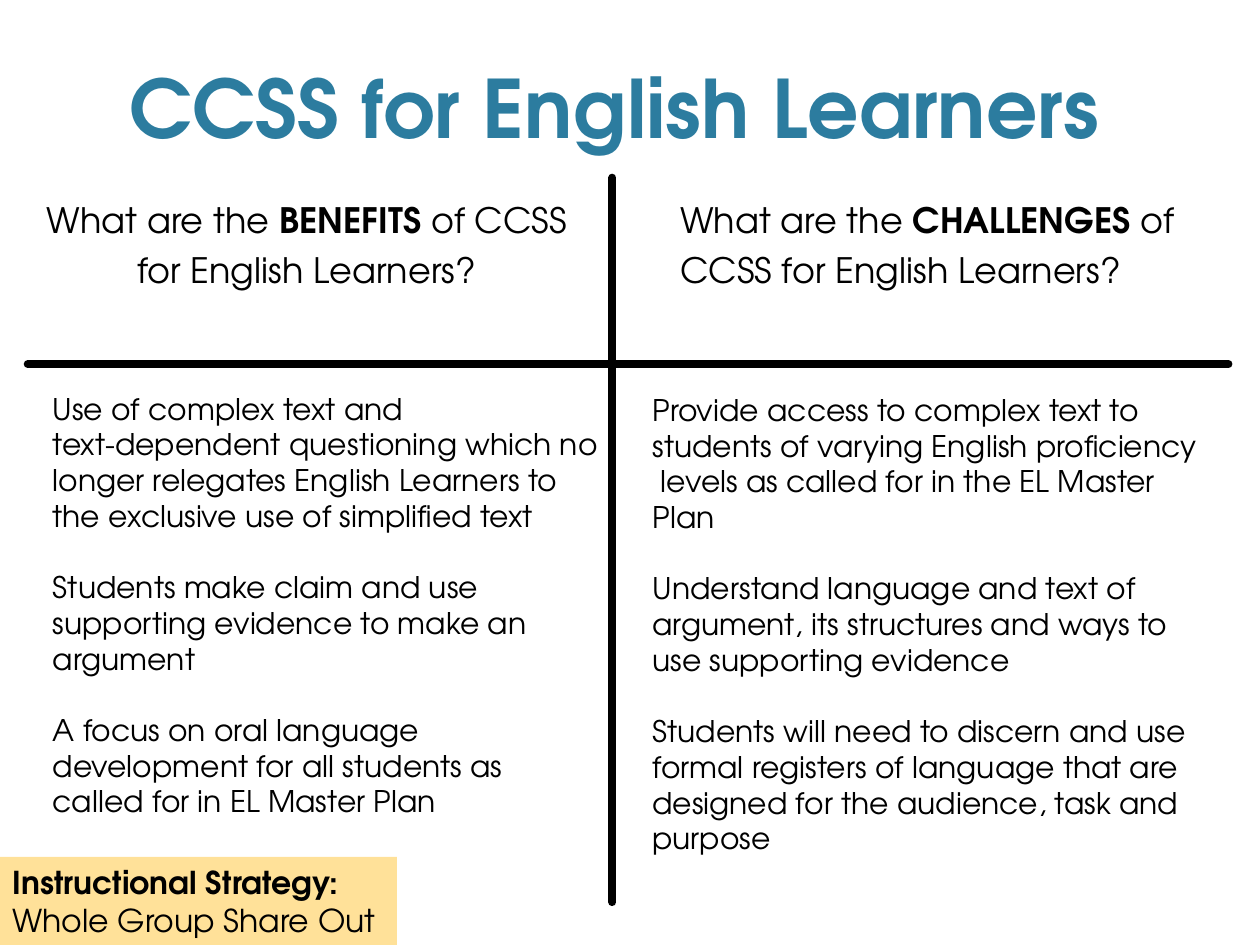
from lxml import etree
from pptx import Presentation
from pptx.dml.color import RGBColor
from pptx.enum.shapes import MSO_CONNECTOR, MSO_SHAPE
from pptx.enum.text import MSO_ANCHOR, PP_ALIGN
from pptx.oxml.ns import qn
from pptx.util import Inches, Pt

LEFT, CENTER = PP_ALIGN.LEFT, PP_ALIGN.CENTER
TOP, BOTTOM = MSO_ANCHOR.TOP, MSO_ANCHOR.BOTTOM
STRAIGHT, RECTANGLE = MSO_CONNECTOR.STRAIGHT, MSO_SHAPE.RECTANGLE

BLACK = RGBColor(0x00, 0x00, 0x00)
TEAL = RGBColor(0x2C, 0x7C, 0x9F)
CREAM = RGBColor(0xFF, 0xE1, 0x99)
FONT = "TeX Gyre Adventor"
PLAIN_INSETS = (0.1, 0.05, 0.1, 0.05)
WIDE_INSETS = (0.32, 0.1, 0.3, 0.1)
BODY_SIZE = 17
BODY_GAP = 20.4

TITLE = "CCSS for English Learners"
QUESTIONS = [
    ("BENEFITS", (0.22, 1.46, 4.43, 5.74), PLAIN_INSETS, CENTER),
    ("CHALLENGES", (5.08, 1.41, 4.67, 5.74), WIDE_INSETS, LEFT),
]
ANSWERS = [
    ((0.32, 3.05, 4.55, 4.34), [
        ["Use of complex text and",
         "text-dependent questioning which no longer relegates English Learners "
         "to the exclusive use of simplified text"],
        ["Students make claim and use supporting evidence to make an argument"],
        ["A focus on oral language development for all students as called for "
         "in EL Master Plan"],
    ]),
    ((5.08, 3.06, 4.55, 4.04), [
        ["Provide access to complex text to students of varying English "
         "proficiency  levels as called for in the EL Master Plan"],
        ["Understand language and text of argument, its structures and ways to "
         "use supporting evidence"],
        ["Students will need to discern and use formal registers of language "
         "that are designed for the audience, task and purpose"],
    ]),
]
STRATEGY = [("Instructional Strategy:", True), ("Whole Group Share Out", False)]
DIVIDERS = [(4.86, 1.41, 4.86, 7.16), (9.75, 2.89, 0.22, 2.89)]


def prepare(frame, insets=PLAIN_INSETS, anchor=TOP):
    frame.word_wrap = True
    frame.vertical_anchor = anchor
    (frame.margin_left, frame.margin_top,
     frame.margin_right, frame.margin_bottom) = map(Inches, insets)
    return frame


def add_text_frame(slide, box, insets=PLAIN_INSETS, anchor=TOP):
    return prepare(slide.shapes.add_textbox(*map(Inches, box)).text_frame, insets, anchor)


def add_paragraph(frame, runs, size, color=BLACK, align=LEFT):
    first = frame.paragraphs[0]
    paragraph = frame.add_paragraph() if first.runs else first
    paragraph.alignment = align
    paragraph.font.name = FONT
    paragraph.font.size = Pt(size)
    paragraph.font.color.rgb = color
    for text, bold in runs:
        run = paragraph.add_run()
        run.text = text
        run.font.name = FONT
        run.font.size = Pt(size)
        run.font.color.rgb = color
        run.font.bold = bold
    return paragraph


def add_divider(slide, ends):
    divider = slide.shapes.add_connector(STRAIGHT, *map(Inches, ends))
    divider.line.color.rgb = BLACK
    divider.line.width = Pt(4.5)
    divider.line._ln.set("cap", "rnd")
    etree.SubElement(divider._element.spPr, qn("a:effectLst"))


def main():
    deck = Presentation()
    deck.slide_width, deck.slide_height = Inches(10), Inches(7.5)
    slide = deck.slides.add_slide(deck.slide_layouts[6])

    title = add_text_frame(slide, (0, 0.32, 9.75, 0.96), anchor=BOTTOM)
    add_paragraph(title, [(TITLE, True)], 46, TEAL, CENTER)

    for topic, box, insets, align in QUESTIONS:
        runs = [("What are the ", False), (topic, True),
                (" of CCSS for English Learners?", False)]
        question = add_paragraph(add_text_frame(slide, box, insets), runs, 20, align=align)
        question.line_spacing = 1.2

    for ends in DIVIDERS:
        add_divider(slide, ends)

    for box, points in ANSWERS:
        answer = add_text_frame(slide, box)
        for index, point in enumerate(points):
            for part, text in enumerate(point):
                paragraph = add_paragraph(answer, [(text, False)], BODY_SIZE)
                if index and not part:
                    paragraph.space_before = Pt(BODY_GAP)

    banner = slide.shapes.add_shape(RECTANGLE, *map(Inches, (0, 6.8, 3.15, 0.7)))
    banner.shadow.inherit = False
    banner.fill.solid()
    banner.fill.fore_color.rgb = CREAM
    banner.line.fill.background()
    strategy = prepare(banner.text_frame)
    for line in STRATEGY:
        add_paragraph(strategy, [line], 18)

    deck.save("out.pptx")


if __name__ == "__main__":
    main()
